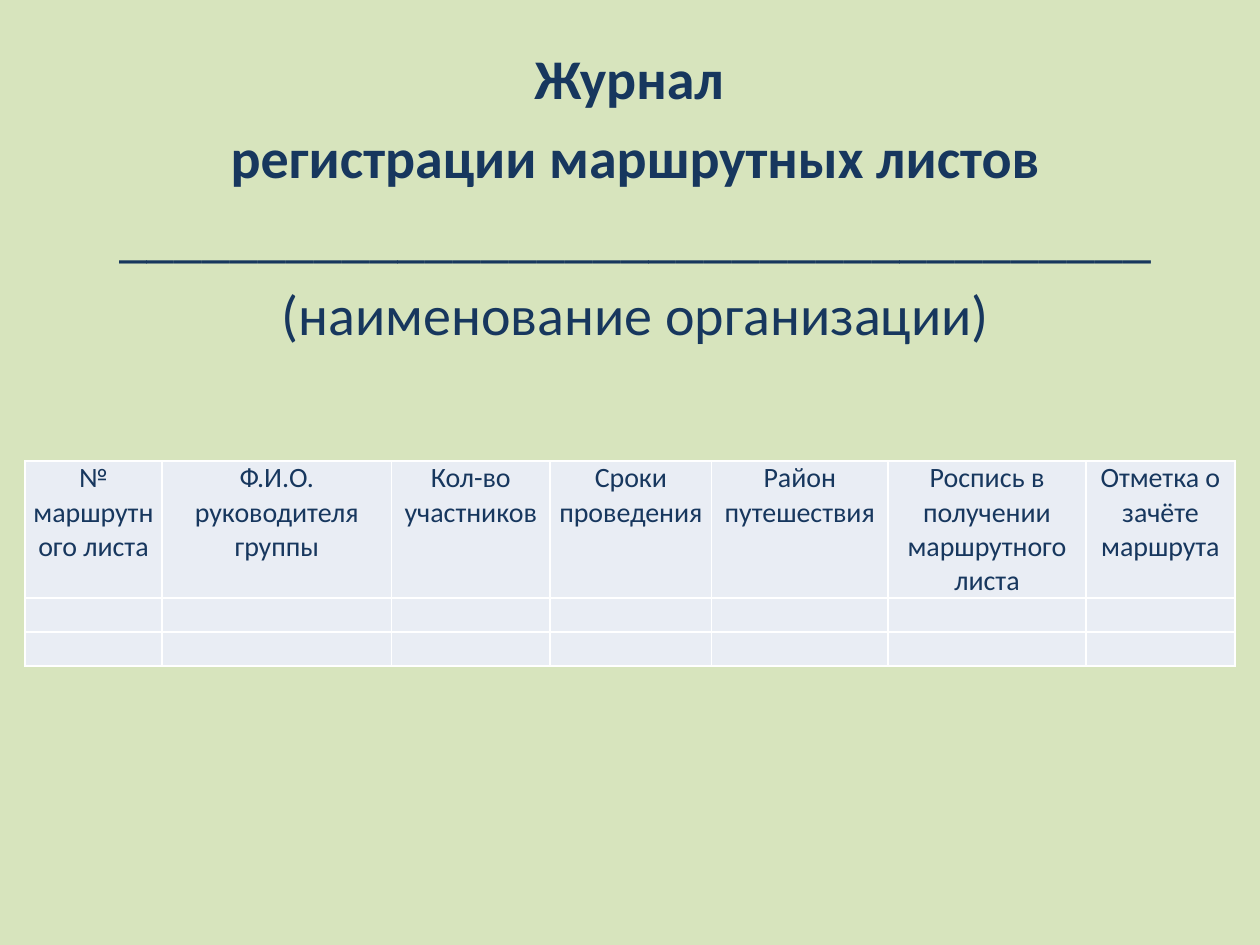
from dataclasses import dataclass

from lxml import etree
from pptx import Presentation
from pptx.dml.color import RGBColor
from pptx.enum.text import PP_ALIGN
from pptx.oxml.ns import qn
from pptx.util import Pt

CENTER = PP_ALIGN.CENTER


@dataclass(frozen=True)
class Theme:
    """Colours, font and type sizes of the slide."""
    background: str = "D7E4BD"
    text: str = "17375E"
    cell: str = "E9EDF4"
    border: str = "FFFFFF"
    font: str = "Calibri"
    title_size: float = 32
    table_size: float = 16


THEME = Theme()
TITLE_LINES = [
    ("Журнал ", True),
    ("регистрации маршрутных листов", True),
    ("_" * 37, False),
    ("(наименование организации)", False),
]
COLUMNS = [
    ("№ маршрутного листа", 78.5),
    ("Ф.И.О. руководителя группы", 131),
    ("Кол-во участников", 90.75),
    ("Сроки проведения", 92.25),
    ("Район путешествия", 100.75),
    ("Роспись в получении маршрутного листа", 113.25),
    ("Отметка о зачёте маршрута", 85),
]
ROW_HEIGHTS = [78.25, 19.5, 19.5]


def write(p, text, size, bold=False, before=0):
    """Write centred text into a paragraph, keeping the size if it is empty."""
    p.alignment = CENTER
    p.space_before = Pt(before)
    if not text:
        etree.SubElement(p._p, qn("a:endParaRPr"), sz=str(int(size * 100)))
        return
    r = p.add_run()
    r.text = text
    r.font.name = THEME.font
    r.font.size = Pt(size)
    r.font.bold = bold
    r.font.color.rgb = RGBColor.from_string(THEME.text)


def add_title(s, x, y, w, h):
    """Place the journal heading and the line for the organisation."""
    tf = s.shapes.add_textbox(Pt(x), Pt(y), Pt(w), Pt(h)).text_frame
    tf.word_wrap = True
    for i, (text, bold) in enumerate(TITLE_LINES):
        p = tf.add_paragraph() if i else tf.paragraphs[0]
        write(p, text, THEME.title_size, bold, before=0.2 * THEME.title_size)


def style_cell(cell):
    """Give a cell its margins, borders and fill."""
    cell.margin_left = cell.margin_right = Pt(4.5)
    cell.margin_top = cell.margin_bottom = Pt(0)
    tc_pr = cell._tc.get_or_add_tcPr()
    for side in ("lnL", "lnR", "lnT", "lnB"):
        line = etree.SubElement(tc_pr, qn(f"a:{side}"), w=str(Pt(1)))
        fill = etree.SubElement(line, qn("a:solidFill"))
        etree.SubElement(fill, qn("a:srgbClr"), val=THEME.border)
    cell.fill.solid()
    cell.fill.fore_color.rgb = RGBColor.from_string(THEME.cell)


def add_journal(s, x, y, w, h):
    """Place the journal table with its header and blank rows."""
    table = s.shapes.add_table(
        len(ROW_HEIGHTS), len(COLUMNS), Pt(x), Pt(y), Pt(w), Pt(h)).table
    for row, height in zip(table.rows, ROW_HEIGHTS):
        row.height = Pt(height)
    for j, (heading, width) in enumerate(COLUMNS):
        table.columns[j].width = Pt(width)
        for i in range(len(ROW_HEIGHTS)):
            cell = table.cell(i, j)
            style_cell(cell)
            text = "" if i else heading
            write(cell.text_frame.paragraphs[0], text, THEME.table_size)


def main():
    """Build the slide and save it."""
    prs = Presentation()
    prs.slide_width, prs.slide_height = Pt(720), Pt(540)
    s = prs.slides.add_slide(prs.slide_layouts[6])
    s.background.fill.solid()
    s.background.fill.fore_color.rgb = RGBColor.from_string(THEME.background)
    add_title(s, 42.5, 21.6, 641.5, 460.8)
    add_journal(s, 14.2, 263.5, sum(w for _, w in COLUMNS), sum(ROW_HEIGHTS))
    prs.save("out.pptx")


if __name__ == "__main__":
    main()
